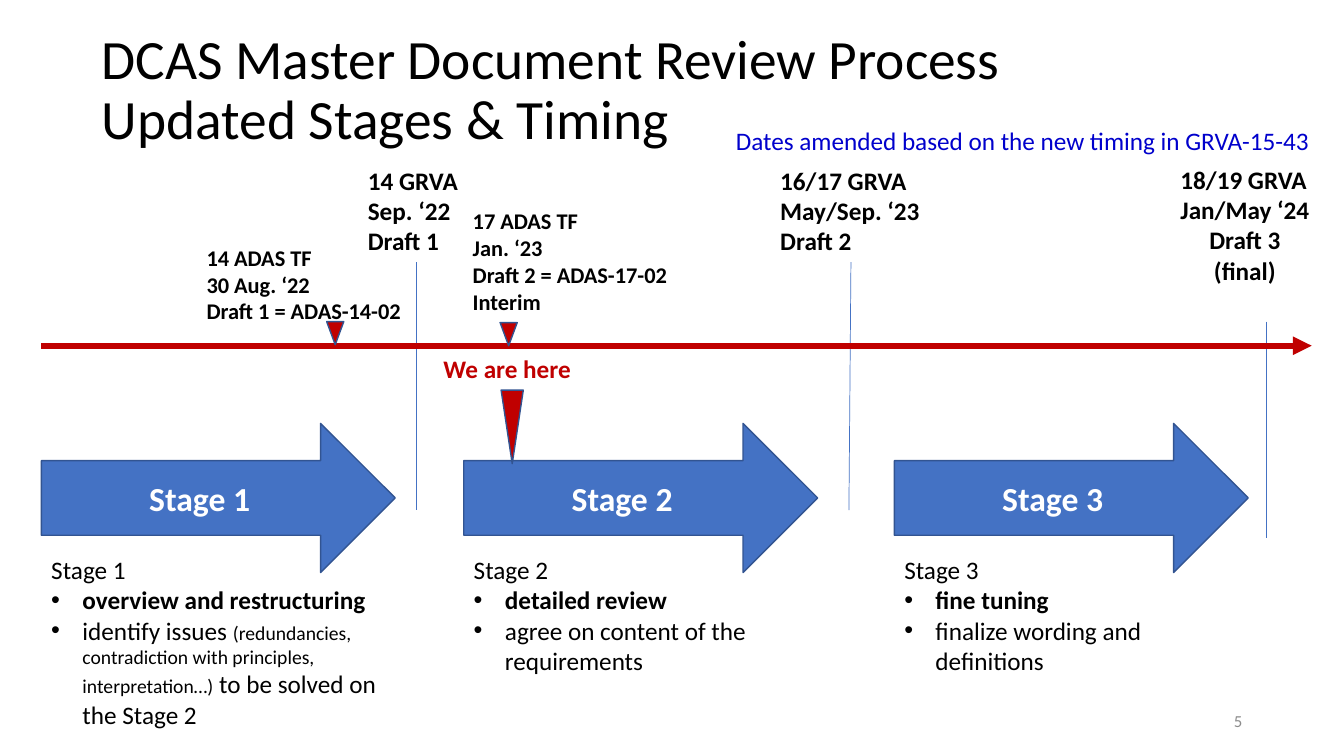
from lxml import etree
from pptx import Presentation
from pptx import util as u
from pptx.dml.color import RGBColor
from pptx.enum import shapes, text
from pptx.oxml.ns import qn

COLOURS = {"black": "000000", "white": "FFFFFF", "grey": "8C8C8C", "blue": "4472C4",
           "outline": "325491", "red": "C00000", "note": "0000CC"}
LEFT, CENTRE, RIGHT = text.PP_ALIGN.LEFT, text.PP_ALIGN.CENTER, text.PP_ALIGN.RIGHT
MIDDLE = text.MSO_ANCHOR.MIDDLE
GROW, FIXED = text.MSO_AUTO_SIZE.SHAPE_TO_FIT_TEXT, text.MSO_AUTO_SIZE.NONE


def colour(name):
    return RGBColor.from_string(COLOURS[name])


def apply(target, values):
    for name, value in values.items():
        setattr(target, name, value)


class TimelinePage:
    """Holds the text style and the current slide, and adds elements to it."""

    def __init__(self, deck, font="Calibri"):
        self.page = deck.slides.add_slide(deck.slide_layouts[5])
        self.font = font

    def span(self, para, words, size, ink="black", bold=False):
        run = para.add_run()
        run.text = words
        apply(run.font, {"name": self.font, "size": u.Pt(size), "bold": bold})
        run.font.color.rgb = colour(ink)

    def title(self, lines, place, size):
        box = self.page.shapes.title
        apply(box, dict(zip(("left", "top", "width", "height"), map(u.Inches, place))))
        apply(box.text_frame, {"vertical_anchor": MIDDLE, "auto_size": FIXED, "word_wrap": True})
        para = box.text_frame.paragraphs[0]
        apply(para, {"alignment": LEFT, "line_spacing": 0.9})
        for number, line in enumerate(lines):
            if number:
                para.add_line_break()
            self.span(para, line, size)

    def label(self, lines, place, size=18, ink="black", bold=True, wrap=False, aligns=()):
        box = self.page.shapes.add_textbox(*map(u.Inches, place))
        frame = box.text_frame
        apply(frame, {"word_wrap": wrap, "auto_size": GROW})
        for number, line in enumerate(lines):
            para = frame.add_paragraph() if number else frame.paragraphs[0]
            para.alignment = aligns[number] if aligns else LEFT
            self.span(para, line, size, ink, bold)
        return box

    def bullets(self, heading, items, place):
        frame = self.label([heading], place, bold=False, wrap=True).text_frame
        for item in items:
            para = frame.add_paragraph()
            props = para._p.get_or_add_pPr()
            props.set("marL", str(u.Inches(0.31)))
            props.set("indent", str(u.Inches(-0.31)))
            etree.SubElement(props, qn("a:buFont")).set("typeface", "Arial")
            etree.SubElement(props, qn("a:buChar")).set("char", "•")
            for words, size, bold in item:
                self.span(para, words, size, bold=bold)

    def shape(self, kind, place, fill):
        shape = self.page.shapes.add_shape(kind, *map(u.Inches, place))
        shape.shadow.inherit = False
        shape.fill.solid()
        shape.fill.fore_color.rgb = colour(fill)
        shape.line.color.rgb = colour("outline")
        shape.line.width = u.Pt(1)
        return shape

    def stage_arrow(self, name, place):
        arrow = self.shape(shapes.MSO_SHAPE.RIGHT_ARROW, place, "blue")
        arrow.text_frame.vertical_anchor = MIDDLE
        para = arrow.text_frame.paragraphs[0]
        para.alignment = CENTRE
        self.span(para, name, 24, "white", True)

    def marker(self, place):
        self.shape(shapes.MSO_SHAPE.ISOSCELES_TRIANGLE, place, "red").rotation = 180

    def line(self, start, end, ink, width, arrow=False):
        line = self.page.shapes.add_connector(
            shapes.MSO_CONNECTOR.STRAIGHT, *map(u.Inches, start + end))
        line.line.color.rgb = colour(ink)
        line.line.width = u.Pt(width)
        if arrow:
            etree.SubElement(line.line._get_or_add_ln(), qn("a:tailEnd")).set("type", "triangle")
        etree.SubElement(line._element.spPr, qn("a:effectLst"))


STAGES = [
    ("Stage 1", 0.41, 1.92, [
        [("overview and restructuring", 18, True)],
        [("identify issues ", 18, False),
         ("(redundancies, contradiction with principles, interpretation…)", 14, False),
         (" to be solved on the Stage 2", 18, False)]]),
    ("Stage 2", 4.6, 1.31, [
        [("detailed review", 18, True)],
        [("agree on content of the requirements", 18, False)]]),
    ("Stage 3", 8.87, 1.31, [
        [("fine tuning", 18, True)],
        [("finalize wording and definitions", 18, False)]]),
]
MILESTONES = [
    (["14 GRVA", "Sep. ‘22", "Draft 1"], (3.55, 1.59, 1.16, 1.01), ()),
    (["16/17 GRVA", "May/Sep. ‘23", "Draft 2"], (7.64, 1.59, 1.6, 1.01), ()),
    (["18/19 GRVA", "Jan/May ‘24", "Draft 3", "(final)"], (11.61, 1.58, 1.54, 1.31),
     (LEFT, LEFT, CENTRE, CENTRE)),
]
MILESTONE_LINES = [((4.13, 2.6), (4.13, 5.06)), ((8.44, 2.6), (8.42, 5.06)),
                   ((12.56, 3.19), (12.56, 5.34))]
MEETINGS = [
    (["14 ADAS TF", "30 Aug. ‘22", "Draft 1 = ADAS-14-02"],
     (1.95, 2.37, 2.18, 0.91), (3.24, 3.19, 0.17, 0.23)),
    (["17 ADAS TF", "Jan. ‘23", "Draft 2 = ADAS-17-02", "Interim"],
     (4.59, 2.01, 2.18, 1.18), (4.96, 3.2, 0.17, 0.23)),
]


def main():
    deck = Presentation()
    apply(deck, {"slide_width": u.Inches(13.33), "slide_height": u.Inches(7.5)})
    page = TimelinePage(deck)
    page.title(["DCAS Master Document Review Process ", "Updated Stages & Timing"],
               (0.91, 0.38, 11.77, 1.05), 39.6)
    number = page.label(["5"], (9.42, 6.95, 3, 0.4), 12, "grey", False, True, [RIGHT])
    apply(number.text_frame, {"vertical_anchor": MIDDLE, "auto_size": FIXED})
    for name, left, height, items in STAGES:
        page.stage_arrow(name, (left, 4.2, 3.51, 1.48))
        page.bullets(name, items, (left, 5.45, 3.51, height))
    for lines, place, aligns in MILESTONES:
        page.label(lines, place, aligns=aligns)
    for start, end in MILESTONE_LINES:
        page.line(start, end, "blue", 0.5)
    page.marker((4.97, 3.87, 0.22, 0.73))
    page.label(["We are here"], (4.3, 3.46, 1.48, 0.4), ink="red")
    page.line((0.41, 3.43), (13.01, 3.43), "red", 4.5, arrow=True)
    for lines, place, marker in MEETINGS:
        page.label(lines, place, 16, wrap=True)
        page.marker(marker)
    page.label(["Dates amended based on the new timing in GRVA-15-43"],
               (7.2, 1.19, 5.95, 0.4), ink="note", bold=False, wrap=True)
    deck.save("out.pptx")


if __name__ == "__main__":
    main()
